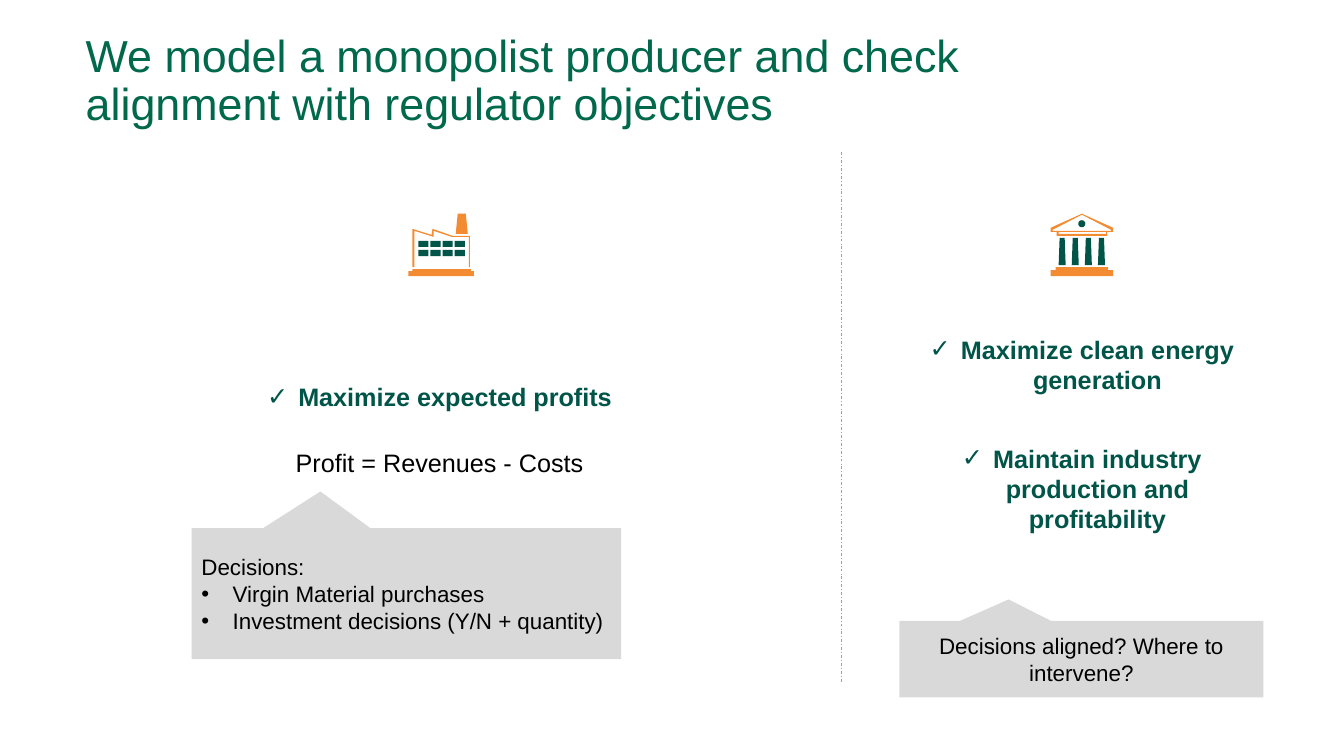
from dataclasses import dataclass
from math import cos, pi, sin

from lxml import etree
from pptx import Presentation
from pptx.dml.color import RGBColor
from pptx.enum.dml import MSO_LINE
from pptx.enum.shapes import MSO_CONNECTOR, MSO_SHAPE
from pptx.enum.text import MSO_ANCHOR, MSO_AUTO_SIZE, PP_ALIGN
from pptx.oxml.ns import qn
from pptx.util import Inches, Pt

LEFT, CENTER = PP_ALIGN.LEFT, PP_ALIGN.CENTER
MIDDLE = MSO_ANCHOR.MIDDLE
CALLOUT = MSO_SHAPE.RECTANGULAR_CALLOUT
STRAIGHT = MSO_CONNECTOR.STRAIGHT


@dataclass(frozen=True)
class Theme:
    font: str = "Arial"
    title: RGBColor = RGBColor(0x00, 0x68, 0x4B)
    dark: RGBColor = RGBColor(0x00, 0x55, 0x48)
    accent: RGBColor = RGBColor(0xF3, 0x8B, 0x32)
    text: RGBColor = RGBColor(0x00, 0x00, 0x00)
    panel: RGBColor = RGBColor(0xD9, 0xD9, 0xD9)
    rule: RGBColor = RGBColor(0xA0, 0xA0, 0xA0)
    title_size: int = 32
    goal_size: int = 18
    note_size: int = 16


THEME = Theme()


# Text helpers
def add_bullet(p, char):
    pPr = p._p.get_or_add_pPr()
    pPr.set("marL", str(Inches(0.31)))
    pPr.set("indent", str(-Inches(0.31)))
    etree.SubElement(pPr, qn("a:buFont")).set("typeface", THEME.font)
    etree.SubElement(pPr, qn("a:buChar")).set("char", char)


def write(p, text, size, color, align=LEFT, bold=False, bullet=None):
    p.alignment = align
    if bullet:
        add_bullet(p, bullet)
    r = p.add_run()
    r.text = text
    r.font.name = THEME.font
    r.font.size = Pt(size)
    r.font.bold = bold
    r.font.color.rgb = color


def add_label(slide, x, y, w, h, text, color, bold=False, bullet=None):
    tf = slide.shapes.add_textbox(Inches(x), Inches(y), Inches(w), Inches(h)).text_frame
    tf.word_wrap = True
    tf.vertical_anchor = MIDDLE
    write(tf.paragraphs[0], text, THEME.goal_size, color, CENTER, bold, bullet)


def add_goal(slide, x, y, w, h, text):
    add_label(slide, x, y, w, h, text, THEME.dark, bold=True, bullet="✓")


def add_callout(slide, x, y, w, h, lines, align):
    sp = slide.shapes.add_shape(CALLOUT, Inches(x), Inches(y), Inches(w), Inches(h))
    sp.adjustments[0], sp.adjustments[1] = -0.2, -0.78
    sp.shadow.inherit = False
    sp.fill.solid()
    sp.fill.fore_color.rgb = THEME.panel
    sp.line.fill.background()
    tf = sp.text_frame
    tf.word_wrap = True
    tf.vertical_anchor = MIDDLE
    for i, (text, bullet) in enumerate(lines):
        p = tf.add_paragraph() if i else tf.paragraphs[0]
        write(p, text, THEME.note_size, THEME.text, align, bullet=bullet)


# Icon helpers: each contour is a list of points relative to (x, y)
def rect(x, y, w, h):
    return [(x, y), (x + w, y), (x + w, y + h), (x, y + h)]


def add_outline(slide, x, y, contours, color):
    builder = None
    for contour in contours:
        start, *rest = [(Inches(x + dx), Inches(y + dy)) for dx, dy in contour]
        if builder is None:
            builder = slide.shapes.build_freeform(*start)
        else:
            builder.move_to(*start)
        builder.add_line_segments(rest, close=True)
    sp = builder.convert_to_shape()
    sp.shadow.inherit = False
    sp.fill.solid()
    sp.fill.fore_color.rgb = color
    sp.line.fill.background()


def add_factory(slide, x, y):
    windows = [rect(0.1 + 0.12 * col, 0.27 + 0.09 * row, 0.1, 0.06)
               for row in range(2) for col in range(4)]
    chimney = [(0.49, 0), (0.57, 0), (0.59, 0.2), (0.47, 0.2)]
    base = [(0, 0.57), (0.04, 0.57), (0.04, 0.55), (0.62, 0.55),
            (0.62, 0.57), (0.65, 0.57), (0.65, 0.62), (0, 0.62)]
    walls = [(0.61, 0.22), (0.44, 0.22), (0.24, 0.15), (0.23, 0.21), (0.04, 0.15),
             (0.04, 0.53), (0.06, 0.53), (0.06, 0.17), (0.25, 0.23), (0.25, 0.17),
             (0.43, 0.23), (0.6, 0.23), (0.6, 0.53), (0.61, 0.53)]
    add_outline(slide, x, y, windows, THEME.dark)
    add_outline(slide, x, y, [chimney, base, walls], THEME.accent)


def add_institution(slide, x, y):
    base = [(0, 0.56), (0.05, 0.56), (0.05, 0.53), (0.57, 0.53),
            (0.57, 0.56), (0.62, 0.56), (0.62, 0.62), (0, 0.62)]
    roof = [(0.31, 0), (0.62, 0.14), (0.62, 0.18), (0.56, 0.18),
            (0.56, 0.22), (0.06, 0.22), (0.06, 0.18), (0, 0.18), (0, 0.14)]
    gable = [(0.31, 0.01), (0.6, 0.16), (0.6, 0.17), (0.02, 0.17), (0.02, 0.16)]
    beam = rect(0.08, 0.18, 0.47, 0.02)
    steps = 24
    dot = [(0.31 + 0.035 * cos(2 * pi * i / steps), 0.1 + 0.035 * sin(2 * pi * i / steps))
           for i in range(steps)]
    columns = [[(dx + 0.01, 0.24), (dx + 0.06, 0.24), (dx + 0.07, 0.51), (dx, 0.51)]
               for dx in (0.08 + 0.13 * col for col in range(4))]
    add_outline(slide, x, y, [base, roof, gable, beam], THEME.accent)
    add_outline(slide, x, y, [dot, *columns], THEME.dark)


# Title
def add_title(slide, x, y, w, h):
    title = slide.shapes.title
    title.left, title.top, title.width, title.height = map(Inches, (x, y, w, h))
    tf = title.text_frame
    tf.margin_left = tf.margin_right = tf.margin_top = tf.margin_bottom = 0
    tf.word_wrap = True
    tf.auto_size = MSO_AUTO_SIZE.NONE
    tf.vertical_anchor = MIDDLE
    p = tf.paragraphs[0]
    p.line_spacing = 0.9
    write(p, "We model a monopolist producer and check alignment with regulator objectives",
          THEME.title_size, THEME.title)


# Divider between the two regions
def add_divider(slide, x, top, bottom):
    line = slide.shapes.add_connector(STRAIGHT, Inches(x), Inches(top), Inches(x), Inches(bottom))
    line.line.color.rgb = THEME.rule
    line.line.width = Pt(0.5)
    line.line.dash_style = MSO_LINE.DASH_DOT
    etree.SubElement(line._element.spPr, qn("a:effectLst"))


# Left region: the producer
def add_producer(slide, x, y, w):
    add_factory(slide, x + 2.15, y)
    add_goal(slide, x + 0.33, y + 1.23, w, 1.17, "Maximize expected profits")
    add_label(slide, x + 0.33, y + 1.88, w, 1.17, "Profit = Revenues - Costs", THEME.text)
    add_callout(slide, x, y + 3.12, w, 1.3, [
        ("Decisions:", None),
        ("Virgin Material purchases", "•"),
        ("Investment decisions (Y/N + quantity)", "•"),
    ], LEFT)


# Right region: the regulator
def add_regulator(slide, x, y, w):
    add_institution(slide, x + 1.5, y)
    goal_w = w - 0.21
    add_goal(slide, x + 0.11, y + 0.98, goal_w, 1.03, "Maximize clean energy generation")
    add_goal(slide, x + 0.11, y + 2.14, goal_w, 1.17,
             "Maintain industry production and profitability")
    add_callout(slide, x, y + 4.04, w, 0.76,
                [("Decisions aligned? Where to intervene?", None)], CENTER)


def main():
    prs = Presentation()
    prs.slide_width, prs.slide_height = Inches(13.33), Inches(7.5)
    slide = prs.slides.add_slide(prs.slide_layouts[5])
    add_title(slide, 0.85, 0.3, 9.27, 1.03)
    add_divider(slide, 8.34, 1.51, 6.77)
    add_producer(slide, 1.9, 2.12, 4.26)
    add_regulator(slide, 8.92, 2.12, 3.61)
    prs.save("out.pptx")


if __name__ == "__main__":
    main()
